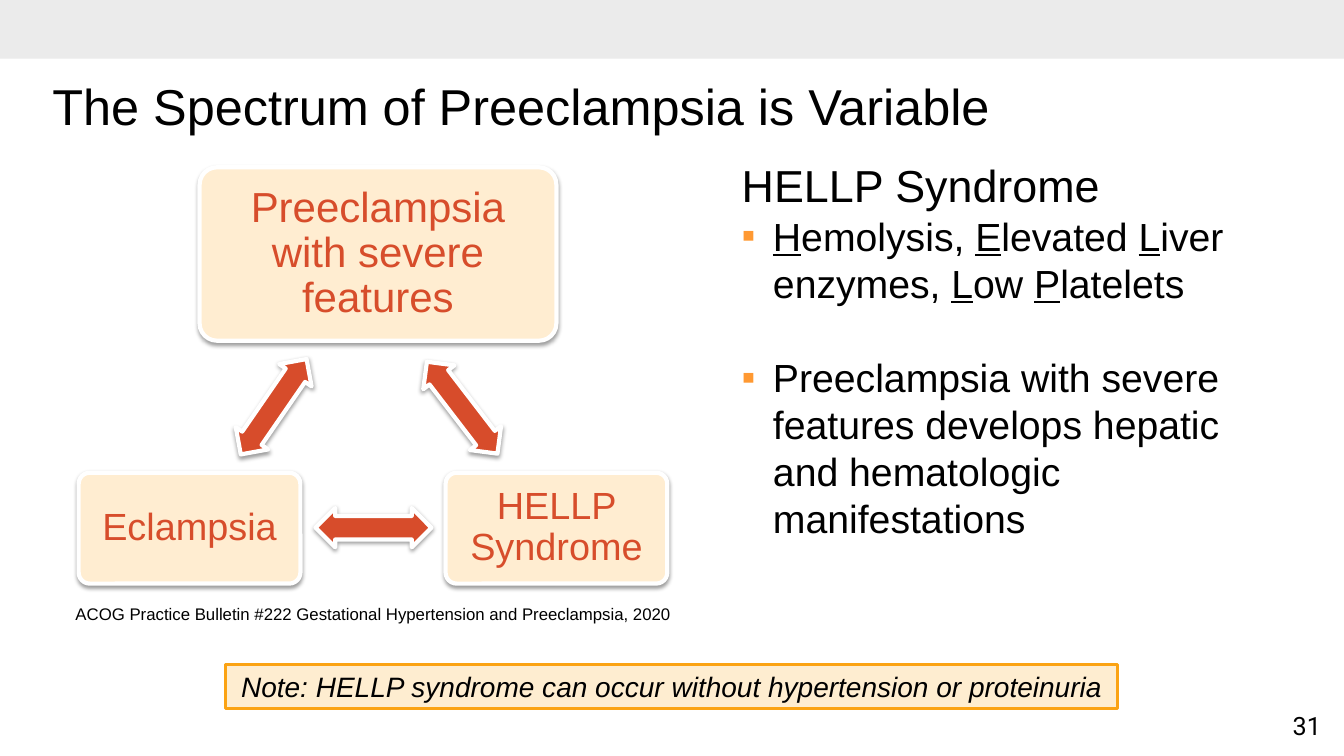
from dataclasses import dataclass

from lxml.etree import SubElement
from pptx import Presentation
from pptx.dml.color import RGBColor
from pptx.enum.shapes import MSO_SHAPE as Preset
from pptx.enum.text import MSO_ANCHOR as Anchor, PP_ALIGN as Align
from pptx.oxml.ns import qn
from pptx.util import Inches, Pt

COLORS = {
    "text": "000000",
    "band": "E3E3E3",
    "paper": "FFFFFF",
    "cream": "FFEDD1",
    "label": "D74D2B",
    "arrow": "D74C2B",
    "bullet": "FF9932",
    "note_fill": "FEEDD0",
    "note_line": "FBA313",
}
WIDTH, HEIGHT = Inches(13.33), Inches(7.5)
COLUMNS, ROWS = 160, 90
BULLET_INDENT = Inches(0.31)


@dataclass(frozen=True)
class Area:
    column: float
    row: float
    columns: float
    rows: float

    def lengths(self) -> tuple[int, int, int, int]:
        return (
            round(self.column * WIDTH / COLUMNS),
            round(self.row * HEIGHT / ROWS),
            round(self.columns * WIDTH / COLUMNS),
            round(self.rows * HEIGHT / ROWS),
        )


@dataclass(frozen=True)
class Condition:
    name: str
    area: Area
    size: int
    inset: float


@dataclass(frozen=True)
class Link:
    column: float
    row: float
    rotation: float


CONDITIONS = [
    Condition("Preeclampsia with severe features", Area(23.76, 19.92, 42.48, 20.64), 30, 0.17),
    Condition("HELLP Syndrome", Area(53.04, 56.28, 26.4, 13.2), 27, 0.14),
    Condition("Eclampsia", Area(9.36, 56.28, 26.4, 13.2), 27, 0.14),
]
LINKS = [Link(48.12, 46.2, 52.5), Link(37.56, 60.48, 180), Link(25.68, 46.08, 304.6)]


def add_bullet(paragraph) -> None:
    properties = paragraph._p.get_or_add_pPr()
    properties.set("marL", str(BULLET_INDENT))
    properties.set("indent", str(-BULLET_INDENT))
    color = SubElement(properties, qn("a:buClr"))
    SubElement(color, qn("a:srgbClr"), val=COLORS["bullet"])
    SubElement(properties, qn("a:buFont"), typeface="Arial")
    SubElement(properties, qn("a:buChar"), char="▪")


def write(paragraph, text: str, *, size: float, color: str = "text", font: str = "Arial",
          align=Align.LEFT, italic: bool = False, bullet: bool = False,
          before: float = 0, spacing: float = 1.0) -> None:
    if bullet:
        add_bullet(paragraph)
    paragraph.alignment = align
    paragraph.space_before = Pt(before)
    paragraph.line_spacing = spacing
    for index, part in enumerate(text.split("_")):
        if part:
            run = paragraph.add_run()
            run.text = part
            run.font.size = Pt(size)
            run.font.name = font
            run.font.italic = italic
            run.font.underline = index % 2 == 1
            run.font.color.rgb = RGBColor.from_string(COLORS[color])


def add_frame(slide, area: Area, wrap: bool = True):
    frame = slide.shapes.add_textbox(*area.lengths()).text_frame
    frame.word_wrap = wrap
    return frame


def add_block(slide, preset, area: Area, fill: str, line: str = "", weight: float = 0):
    block = slide.shapes.add_shape(preset, *area.lengths())
    block.shadow.inherit = False
    block.fill.solid()
    block.fill.fore_color.rgb = RGBColor.from_string(COLORS[fill])
    if line:
        block.line.color.rgb = RGBColor.from_string(COLORS[line])
        block.line.width = Pt(weight)
    else:
        block.line.fill.background()
    return block


def add_raised(slide, preset, area: Area, fill: str):
    block = add_block(slide, preset, area, fill, "paper", 3)
    effects = block._element.spPr.find(qn("a:effectLst"))
    shadow = SubElement(effects, qn("a:outerShdw"), blurRad=str(Pt(3.1)), dist=str(Pt(1.6)),
                        dir="5400000", rotWithShape="0")
    color = SubElement(shadow, qn("a:srgbClr"), val=COLORS["text"])
    SubElement(color, qn("a:alpha"), val="38000")
    return block


def add_condition(slide, condition: Condition) -> None:
    card = add_raised(slide, Preset.ROUNDED_RECTANGLE, condition.area, "cream")
    card.adjustments[0] = 0.1
    frame = card.text_frame
    frame.word_wrap = True
    frame.vertical_anchor = Anchor.MIDDLE
    frame.margin_left = frame.margin_right = Inches(condition.inset)
    frame.margin_top = frame.margin_bottom = Inches(condition.inset)
    write(frame.paragraphs[0], condition.name, size=condition.size, color="label",
          align=Align.CENTER, spacing=0.9)


def add_link(slide, link: Link) -> None:
    arrow = add_raised(slide, Preset.LEFT_RIGHT_ARROW, Area(link.column, link.row, 13.8, 4.68), "arrow")
    arrow.adjustments[0] = 0.6
    arrow.adjustments[1] = 0.5
    arrow.rotation = link.rotation


def add_title(slide) -> None:
    title = slide.shapes.title
    title.left, title.top, title.width, title.height = Area(5.04, 7.8, 145.32, 10.32).lengths()
    title.text_frame.vertical_anchor = Anchor.MIDDLE
    title.text_frame.word_wrap = True
    write(title.text_frame.paragraphs[0], "The Spectrum of Preeclampsia is Variable", size=36, spacing=0.9)


def add_definition(slide) -> None:
    frame = add_frame(slide, Area(87.12, 18.24, 66.36, 54.48))
    write(frame.paragraphs[0], "HELLP Syndrome", size=32)
    write(frame.add_paragraph(), "_H_emolysis, _E_levated _L_iver enzymes, _L_ow _P_latelets",
          size=28, bullet=True)
    write(frame.add_paragraph(),
          "Preeclampsia with severe features develops hepatic and hematologic manifestations",
          size=28, bullet=True, before=33.6)


def add_note(slide) -> None:
    note = add_block(slide, Preset.RECTANGLE, Area(26.88, 79.08, 106.2, 5.28), "note_fill", "note_line", 2)
    note.text_frame.word_wrap = True
    write(note.text_frame.paragraphs[0],
          "Note: HELLP syndrome can occur without hypertension or proteinuria",
          size=20, italic=True, align=Align.CENTER)


def main() -> None:
    deck = Presentation()
    deck.slide_width, deck.slide_height = WIDTH, HEIGHT
    slide = deck.slides.add_slide(deck.slide_layouts[5])
    band = add_block(slide, Preset.RECTANGLE, Area(0, 0, COLUMNS, 7), "band")
    band_color = band._element.spPr.find(qn("a:solidFill"))[0]
    SubElement(band_color, qn("a:alpha"), val="70000")
    page_number = add_frame(slide, Area(152.52, 84, 6.12, 4.8), wrap=False)
    write(page_number.paragraphs[0], "31", size=18, font="Roboto", align=Align.CENTER)
    add_title(slide)
    citation = add_frame(slide, Area(7.8, 71.28, 73.8, 3.6))
    write(citation.paragraphs[0],
          "ACOG Practice Bulletin #222 Gestational Hypertension and Preeclampsia, 2020", size=12)
    for condition in CONDITIONS:
        add_condition(slide, condition)
    for link in LINKS:
        add_link(slide, link)
    add_definition(slide)
    add_note(slide)
    deck.save("out.pptx")


if __name__ == "__main__":
    main()
